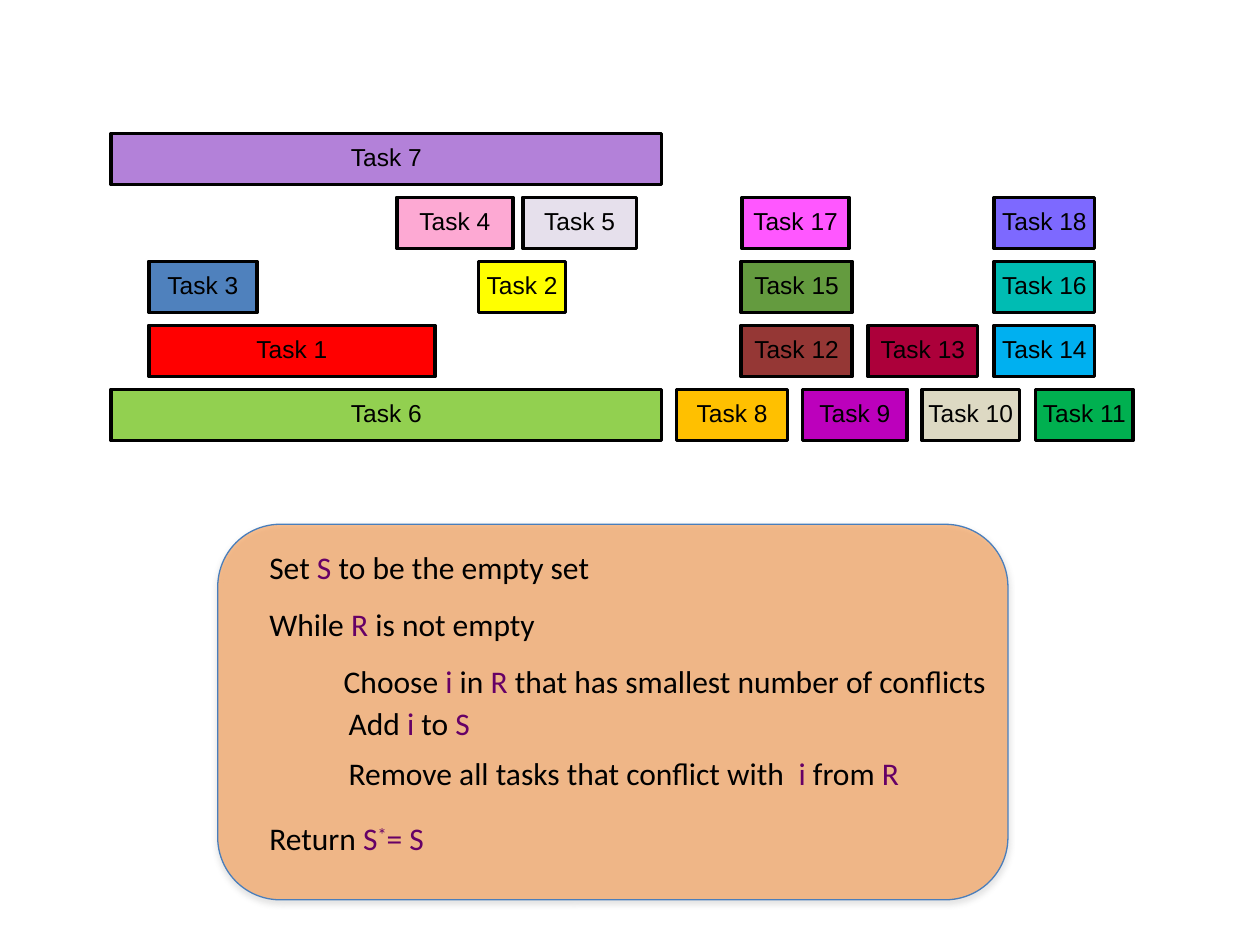
"""Build a slide with a task schedule and the greedy algorithm that selects from it."""
from lxml import etree
from pptx import Presentation
from pptx.dml.color import RGBColor
from pptx.enum.shapes import MSO_SHAPE
from pptx.enum.text import MSO_ANCHOR, PP_ALIGN
from pptx.oxml import parse_xml
from pptx.oxml.ns import nsdecls, qn
from pptx.util import Cm, Pt

RECTANGLE, ROUNDED = MSO_SHAPE.RECTANGLE, MSO_SHAPE.ROUNDED_RECTANGLE
MIDDLE, TOP = MSO_ANCHOR.MIDDLE, MSO_ANCHOR.TOP
CENTER = PP_ALIGN.CENTER

BLACK = RGBColor(0x00, 0x00, 0x00)
PURPLE = RGBColor(0x66, 0x00, 0x66)
ORANGE = RGBColor(0xF7, 0x96, 0x46)
BLUE = RGBColor(0x4A, 0x7E, 0xBB)

TASK_ROWS = [
    [("Task 7", 2.24, 11.1, RGBColor(0xB3, 0x81, 0xD9))],
    [("Task 4", 8.0, 2.34, RGBColor(0xFD, 0xA9, 0xD3)),
     ("Task 5", 10.54, 2.29, RGBColor(0xE6, 0xE0, 0xEC)),
     ("Task 17", 14.96, 2.16, RGBColor(0xFF, 0x57, 0xFF)),
     ("Task 18", 20.04, 2.03, RGBColor(0x7D, 0x69, 0xFF))],
    [("Task 3", 3.0, 2.18, RGBColor(0x4F, 0x81, 0xBD)),
     ("Task 2", 9.65, 1.75, RGBColor(0xFF, 0xFF, 0x00)),
     ("Task 15", 14.94, 2.24, RGBColor(0x64, 0x9B, 0x3F)),
     ("Task 16", 20.04, 2.03, RGBColor(0x00, 0xBC, 0xB3))],
    [("Task 1", 3.0, 5.77, RGBColor(0xFF, 0x00, 0x00)),
     ("Task 12", 14.94, 2.24, RGBColor(0x95, 0x37, 0x35)),
     ("Task 13", 17.5, 2.21, RGBColor(0xAC, 0x00, 0x3A)),
     ("Task 14", 20.04, 2.03, RGBColor(0x00, 0xB0, 0xF0))],
    [("Task 6", 2.24, 11.1, RGBColor(0x92, 0xD0, 0x50)),
     ("Task 8", 13.64, 2.24, RGBColor(0xFF, 0xC0, 0x00)),
     ("Task 9", 16.18, 2.11, RGBColor(0xBC, 0x00, 0xBC)),
     ("Task 10", 18.59, 1.96, RGBColor(0xDD, 0xD9, 0xC3)),
     ("Task 11", 20.88, 1.96, RGBColor(0x00, 0xB0, 0x50))],
]
FIRST_TOP, ROW_PITCH, BAR_HEIGHT = 2.69, 1.29, 1.03

STEPS = [
    (0, 0, [("Set ", BLACK), ("S", PURPLE), (" to be the empty set", BLACK)]),
    (0, 11, [("While ", BLACK), ("R", PURPLE), (" is not empty", BLACK)]),
    (1.5, 11, [("Choose ", BLACK), ("i", PURPLE), (" in ", BLACK), ("R ", PURPLE),
               ("that has smallest number of conflicts", BLACK)]),
    (1.6, 2.5, [("Add ", BLACK), ("i", PURPLE), (" to ", BLACK), ("S", PURPLE)]),
    (1.6, 7, [("Remove all tasks that conflict with  ", BLACK), ("i", PURPLE),
              (" from ", BLACK), ("R", PURPLE)]),
    (0, 15.5, [("Return ", BLACK), ("S", PURPLE), ("*", PURPLE), ("= S", PURPLE)]),
]

SHADOW = (f'<a:effectLst {nsdecls("a")}>'
          '<a:outerShdw blurRad="40000" dist="23000" dir="5400000" rotWithShape="0">'
          '<a:srgbClr val="808080"><a:alpha val="35000"/></a:srgbClr>'
          '</a:outerShdw></a:effectLst>')


def set_all(target, values):
    for name, value in values.items():
        setattr(target, name, value)


def add_block(page, kind, place, fill, line, width):
    block = page.shapes.add_shape(kind, *map(Cm, place))
    block.shadow.inherit = False
    block.fill.solid()
    block.fill.fore_color.rgb = fill
    block.line.color.rgb = line
    block.line.width = Pt(width)
    return block


def add_span(para, text, font, size, color):
    span = para.add_run()
    span.text = text
    set_all(span.font, {"name": font, "size": Pt(size)})
    span.font.color.rgb = color
    return span


def add_task(page, row, name, left, width, color):
    place = (left, FIRST_TOP + row * ROW_PITCH, width, BAR_HEIGHT)
    frame = add_block(page, RECTANGLE, place, color, BLACK, 2).text_frame
    set_all(frame, {"margin_left": 0, "margin_right": 0, "margin_top": 0,
                    "margin_bottom": Cm(0.1), "vertical_anchor": MIDDLE,
                    "word_wrap": True})
    para = frame.paragraphs[0]
    para.alignment = CENTER
    add_span(para, name, "Arial", 14, BLACK)


def add_panel(page):
    panel = add_block(page, ROUNDED, (4.39, 10.57, 15.93, 7.57), ORANGE, BLUE, 0.75)
    properties = panel.fill.fore_color._xFill.find(qn("a:srgbClr"))
    etree.SubElement(properties, qn("a:alpha")).set("val", "59000")
    effects = panel._element.spPr.find(qn("a:effectLst"))
    effects.getparent().replace(effects, parse_xml(SHADOW))


def add_algorithm(page):
    box = page.shapes.add_textbox(Cm(5.18), Cm(10.92), Cm(15.5), Cm(6.6))
    frame = box.text_frame
    set_all(frame, {"word_wrap": True, "vertical_anchor": TOP})
    for number, (indent, gap, spans) in enumerate(STEPS):
        para = frame.add_paragraph() if number else frame.paragraphs[0]
        para._p.get_or_add_pPr().set("marL", str(Cm(indent)))
        para.space_before = Pt(gap)
        for text, color in spans:
            span = add_span(para, text, "Calibri", 18, color)
            if text == "*":
                span.font._element.set("baseline", "30000")


def main():
    deck = Presentation()
    set_all(deck, {"slide_width": Cm(25.4), "slide_height": Cm(19.05)})
    page = deck.slides.add_slide(deck.slide_layouts[6])
    for row, tasks in enumerate(TASK_ROWS):
        for task in tasks:
            add_task(page, row, *task)
    add_panel(page)
    add_algorithm(page)
    deck.save("out.pptx")


if __name__ == "__main__":
    main()
